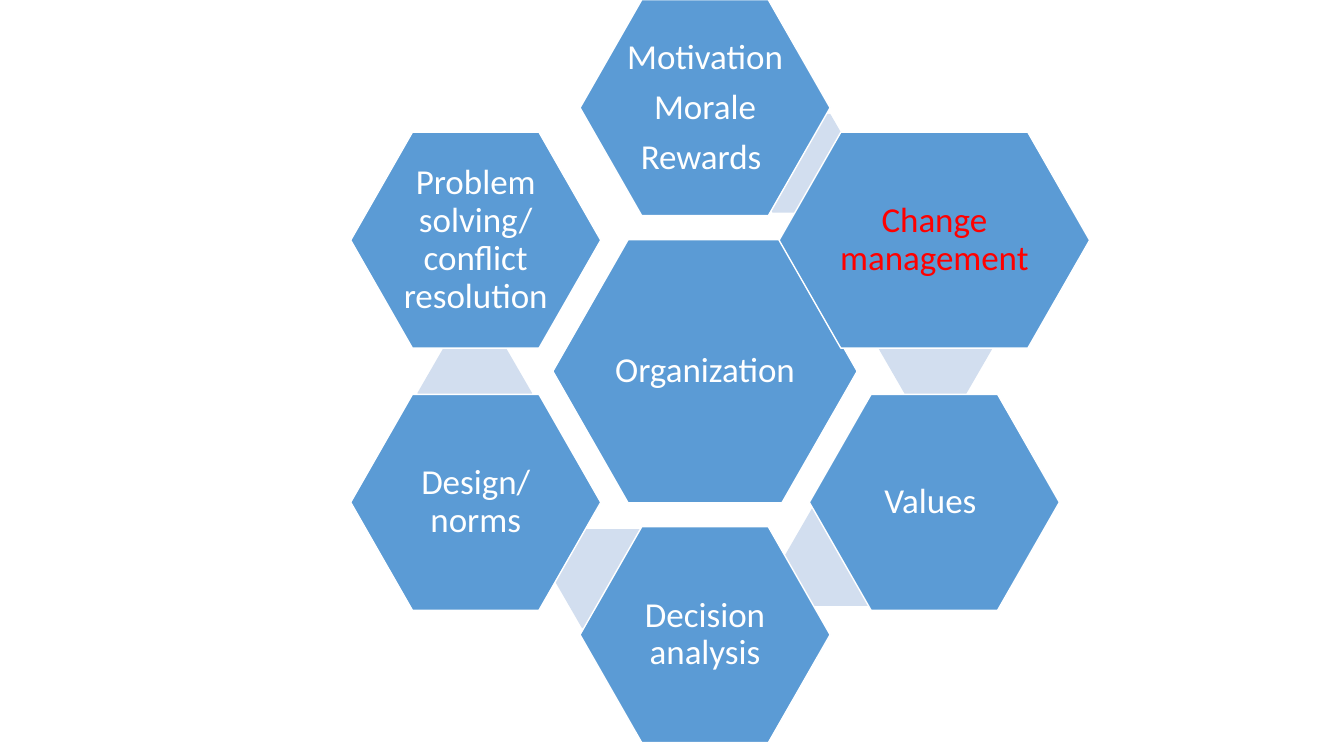
"""Build a slide of six linked hexagons around the organization."""
from pptx import Presentation
from pptx.dml.color import RGBColor
from pptx.enum.shapes import MSO_SHAPE as Preset
from pptx.enum.text import MSO_ANCHOR as Anchor, PP_ALIGN as Align
from pptx.util import Pt

COLORS = {"node": "5B9BD5", "link": "D2DEEF", "white": "FFFFFF", "red": "FF0000"}
NODE_WIDTH, NODE_HEIGHT = 178.6, 154.2
CENTER_X, CENTER_Y = 503.6, 265.2
STEP_X, STEP_Y, TOP_Y = 163.8, 93.6, 188.2


def add_hexagon(center_x, center_y, width, height, color, inset):
    hexagon = page.shapes.add_shape(
        Preset.HEXAGON, Pt(center_x - width / 2), Pt(center_y - height / 2), Pt(width), Pt(height))
    hexagon.adjustments[0] = inset
    hexagon.shadow.inherit = False
    hexagon.fill.solid()
    hexagon.fill.fore_color.rgb = RGBColor.from_string(COLORS[color])
    hexagon.line.fill.background()
    return hexagon


def add_node(lines, center_x, center_y, width=NODE_WIDTH, height=NODE_HEIGHT, ink="white"):
    node = add_hexagon(center_x, center_y, width, height, "node", 0.286)
    node.line.color.rgb = RGBColor.from_string(COLORS["white"])
    node.line.width = Pt(1)
    frame = node.text_frame
    frame.word_wrap = True
    frame.vertical_anchor = Anchor.MIDDLE
    frame.margin_left = frame.margin_right = frame.margin_top = frame.margin_bottom = Pt(2.5)
    for index, line in enumerate(lines):
        para = frame.add_paragraph() if index else frame.paragraphs[0]
        para.text = line
        para.alignment = Align.CENTER
        para.line_spacing = 0.9
        para.space_after = Pt(8.75)
        para.font.name = "Calibri"
        para.font.size = Pt(25)
        para.font.color.rgb = RGBColor.from_string(COLORS[ink])


deck = Presentation()
deck.slide_width, deck.slide_height = Pt(960), Pt(540)
page = deck.slides.add_slide(deck.slide_layouts[6])

add_node(["Organization"], CENTER_X, CENTER_Y, 217.4, 188)

ring = [
    (["Motivation", "Morale", "Rewards "], 0, -TOP_Y, (572.4, 116.6), {}),
    (["Change management"], STEP_X, -STEP_Y, (668.2, 248.4), {"width": 221.8, "ink": "red"}),
    (["Values "], STEP_X, STEP_Y, (601.2, 397.4), {}),
    (["Decision analysis"], 0, TOP_Y, (436.3, 413.3), {}),
    (["Design/ norms"], -STEP_X, STEP_Y, (339.1, 280.8), {}),
    (["Problem solving/ conflict resolution"], -STEP_X, -STEP_Y, None, {}),
]
for lines, offset_x, offset_y, link_center, options in ring:
    if link_center:
        add_hexagon(*link_center, 82, 70.6, "link", 0.289)
    add_node(lines, CENTER_X + offset_x, CENTER_Y + offset_y, **options)

deck.save("out.pptx")
